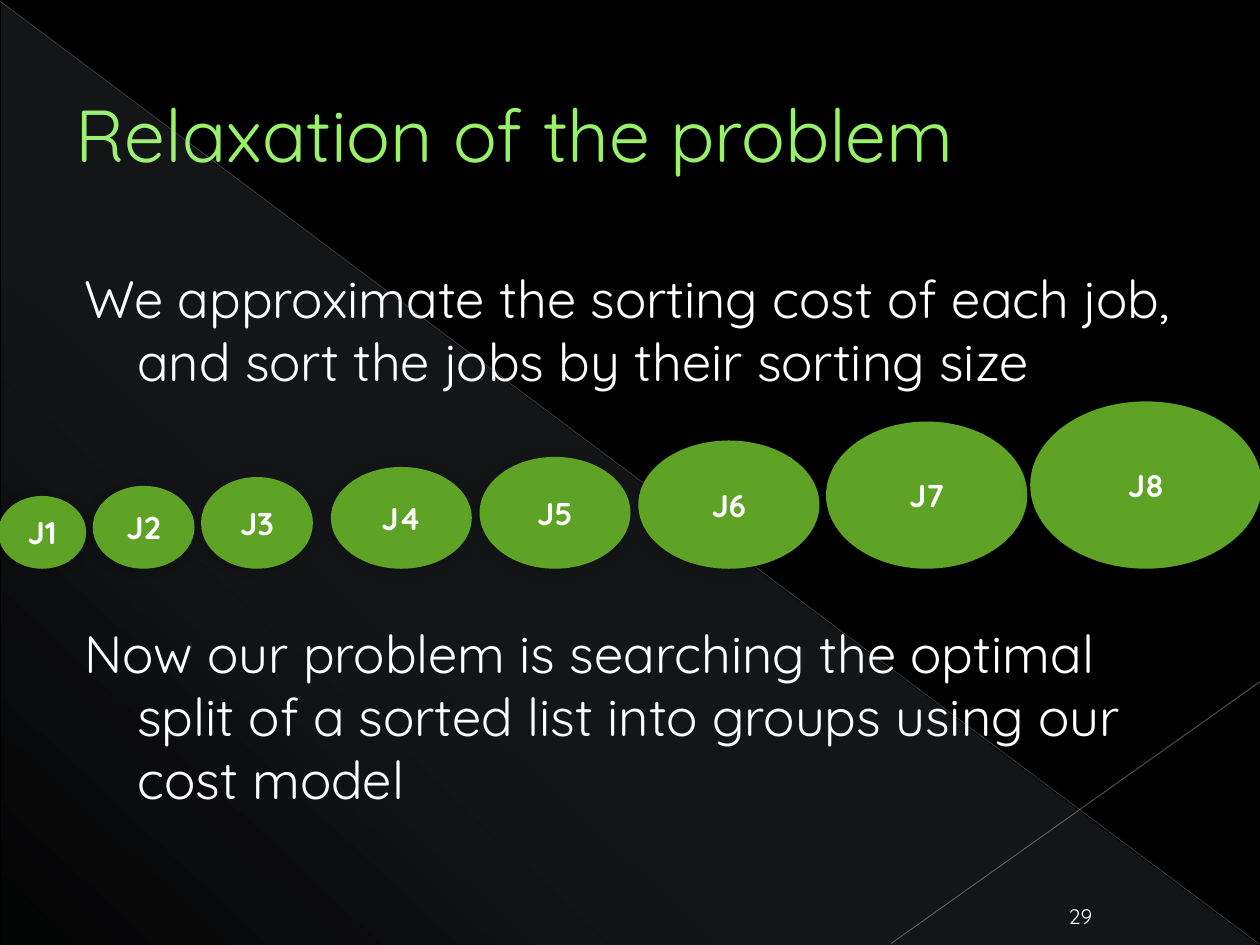
from dataclasses import dataclass

from lxml.etree import SubElement
from pptx import Presentation
from pptx.dml.color import RGBColor
from pptx.enum.shapes import MSO_CONNECTOR as Connector, MSO_SHAPE as Preset
from pptx.enum.text import MSO_ANCHOR as Anchor, MSO_AUTO_SIZE as AutoSize, PP_ALIGN as Align
from pptx.oxml import parse_xml
from pptx.oxml.ns import nsdecls, qn
from pptx.util import Inches, Pt

FONT = "Quicksand"
BLACK = RGBColor(0x00, 0x00, 0x00)
WHITE = RGBColor(0xFF, 0xFF, 0xFF)
TITLE_GREEN = RGBColor(0x98, 0xF1, 0x67)
JOB_GREEN = RGBColor(0x5F, 0xA3, 0x26)
PALE_BLUE = RGBColor(0xD6, 0xEC, 0xFF)
DIAGONAL_GREY = RGBColor(0xB5, 0xBC, 0xC5)
CORNER_GREY = RGBColor(0xBE, 0xC3, 0xCB)
JOB_BASELINE = 4.5


@dataclass(frozen=True)
class Job:
    left: float
    width: float
    height: float


@dataclass(frozen=True)
class Ray:
    start: tuple[float, float]
    end: tuple[float, float]
    color: RGBColor
    width: float
    opacity: int


JOBS = [
    Job(0, 0.67, 0.55),
    Job(0.75, 0.78, 0.63),
    Job(1.61, 0.86, 0.7),
    Job(2.64, 1.09, 0.78),
    Job(3.82, 1.17, 0.86),
    Job(5.08, 1.41, 0.99),
    Job(6.57, 1.57, 1.14),
    Job(8.19, 1.81, 1.3),
]
RAYS = [
    Ray((0, 0.01), (9.99, 7.49), DIAGONAL_GREY, 0.39, 35),
    Ray((10, 5.41), (7.07, 7.49), CORNER_GREY, 0.47, 45),
]
STATEMENTS = [
    ("We approximate the sorting cost of each job, and sort the jobs by their sorting size", 6),
    ("Now our problem is searching the optimal split of a sorted list into groups using our cost model", 131),
]


def place(shape, left: float, top: float, width: float, height: float) -> None:
    shape.left, shape.top = Inches(left), Inches(top)
    shape.width, shape.height = Inches(width), Inches(height)


def style(paragraph, size: float, color: RGBColor, align: Align, bold: bool = False) -> None:
    paragraph.alignment = align
    paragraph.font.name = FONT
    paragraph.font.size = Pt(size)
    paragraph.font.bold = bold
    paragraph.font.color.rgb = color


def draw_triangle(slide) -> None:
    triangle = slide.shapes.add_shape(
        Preset.RIGHT_TRIANGLE, Inches(0.01), Inches(0.02), Inches(9.98), Inches(7.48))
    triangle.shadow.inherit = False
    triangle.line.fill.background()
    stops = "".join(
        f'<a:gs pos="{position * 1000}"><a:srgbClr val="{PALE_BLUE}">'
        f'<a:alpha val="{opacity * 1000}"/></a:srgbClr></a:gs>'
        for position, opacity in [(0, 10), (70, 8), (100, 1)])
    gradient = parse_xml(
        f'<a:gradFill {nsdecls("a")} rotWithShape="1"><a:gsLst>{stops}</a:gsLst>'
        f'<a:lin ang="{133 * 60000}" scaled="0"/></a:gradFill>')
    triangle._element.spPr.find(qn("a:prstGeom")).addnext(gradient)


def draw_ray(slide, ray: Ray) -> None:
    connector = slide.shapes.add_connector(
        Connector.STRAIGHT, *map(Inches, ray.start), *map(Inches, ray.end))
    connector.line.color.rgb = ray.color
    connector.line.width = Pt(ray.width)
    properties = connector._element.spPr
    color = properties.find(".//" + qn("a:srgbClr"))
    SubElement(color, qn("a:alpha"), val=str(ray.opacity * 1000))
    SubElement(properties, qn("a:effectLst"))


def write_title(slide) -> None:
    title = slide.shapes.title
    place(title, 0.5, 0.29, 9, 1.53)
    frame = title.text_frame
    frame.text = "Relaxation of the problem"
    frame.auto_size = AutoSize.NONE
    frame.vertical_anchor = Anchor.MIDDLE
    style(frame.paragraphs[0], 42, TITLE_GREEN, Align.LEFT)


def write_body(slide) -> None:
    body = slide.placeholders[1]
    place(body, 0.5, 2.06, 9, 5)
    frame = body.text_frame
    frame.text = "\n".join(text for text, _ in STATEMENTS)
    frame.auto_size = AutoSize.NONE
    for paragraph, (_, space) in zip(frame.paragraphs, STATEMENTS):
        style(paragraph, 30, WHITE, Align.LEFT)
        paragraph.space_before = Pt(space)
        properties = paragraph._p.get_or_add_pPr()
        properties.set("marL", str(Inches(0.49)))
        properties.set("indent", str(Inches(-0.42)))
        properties.find(qn("a:spcBef")).addnext(parse_xml(f'<a:buNone {nsdecls("a")}/>'))


def draw_job(slide, job: Job, label: str) -> None:
    ellipse = slide.shapes.add_shape(
        Preset.OVAL, Inches(job.left), Inches(JOB_BASELINE - job.height),
        Inches(job.width), Inches(job.height))
    ellipse.fill.solid()
    ellipse.fill.fore_color.rgb = JOB_GREEN
    ellipse.line.color.rgb = JOB_GREEN
    ellipse.line.width = Pt(2)
    ellipse.shadow.inherit = False
    effects = ellipse._element.spPr.find(qn("a:effectLst"))
    shadow = SubElement(effects, qn("a:outerShdw"), blurRad=str(Pt(6)),
                        dist=str(Pt(1)), dir=str(135 * 60000))
    color = SubElement(shadow, qn("a:srgbClr"), val=str(BLACK))
    SubElement(color, qn("a:alpha"), val="20000")
    frame = ellipse.text_frame
    frame.text = label
    frame.word_wrap = False
    frame.vertical_anchor = Anchor.MIDDLE
    style(frame.paragraphs[0], 18, WHITE, Align.CENTER, bold=True)


def write_page_number(slide) -> None:
    box = slide.shapes.add_textbox(Inches(8.3), Inches(7.09), Inches(0.55), Inches(0.33))
    frame = box.text_frame
    frame.text = "29"
    frame.word_wrap = True
    frame.vertical_anchor = Anchor.BOTTOM
    style(frame.paragraphs[0], 12, WHITE, Align.CENTER)


def main() -> None:
    presentation = Presentation()
    presentation.slide_width, presentation.slide_height = Inches(10), Inches(7.5)
    layout = presentation.slide_layouts[1]
    background = layout.background.fill
    background.solid()
    background.fore_color.rgb = BLACK
    slide = presentation.slides.add_slide(layout)
    draw_triangle(slide)
    for ray in RAYS:
        draw_ray(slide, ray)
    write_title(slide)
    write_body(slide)
    for number, job in enumerate(JOBS, start=1):
        draw_job(slide, job, f"J{number}")
    write_page_number(slide)
    presentation.save("out.pptx")


if __name__ == "__main__":
    main()
